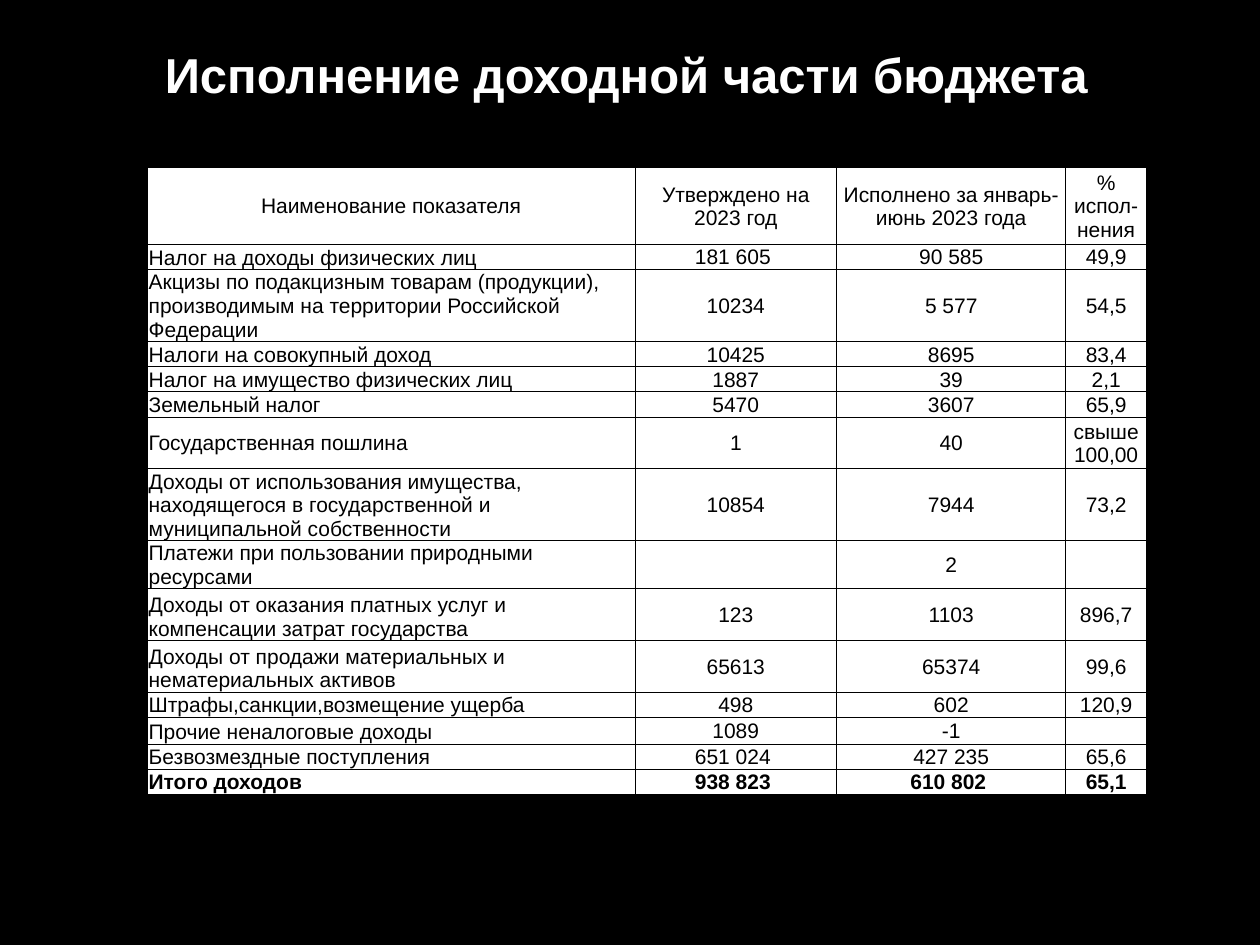
import pptx
import pptx.util
import pptx.dml.color
import pptx.enum.text
import pptx.oxml.ns
import lxml.etree

COLORS = {"background": "000000", "title": "FFFFFF", "cell": "FFFFFF", "text": "000000", "border": "000000"}
FONT = "Arial"
ALIGN = pptx.enum.text.PP_ALIGN
ANCHOR = pptx.enum.text.MSO_ANCHOR
Inches = pptx.util.Inches
qn = pptx.oxml.ns.qn

HEADER = ["Наименование показателя", "Утверждено на 2023 год", "Исполнено за январь-июнь 2023 года", "% испол-нения"]
INCOME = [
    ["Налог на доходы физических лиц", "181 605 ", "90 585", "49,9"],
    ["Акцизы по подакцизным товарам (продукции), производимым на территории Российской Федерации", "10234", "5 577", "54,5"],
    ["Налоги на совокупный доход", "10425", "8695", "83,4"],
    ["Налог на имущество физических лиц", "1887", "39", "2,1"],
    ["Земельный налог", "5470", "3607", "65,9"],
    ["Государственная пошлина", "1", "40", "свыше 100,00"],
    ["Доходы от использования имущества, находящегося в государственной и муниципальной собственности", "10854", "7944", "73,2"],
    ["Платежи при пользовании природными ресурсами", "", "2", ""],
    ["Доходы от оказания платных услуг и компенсации затрат государства", "123", "1103", "896,7"],
    ["Доходы от продажи материальных и нематериальных активов", "65613", "65374", "99,6"],
    ["Штрафы,санкции,возмещение ущерба", "498", "602", "120,9"],
    ["Прочие неналоговые доходы", "1089", "-1", ""],
    ["Безвозмездные поступления", "651 024 ", "427 235", "65,6"],
]
TOTAL = ["Итого доходов", "938 823 ", "610 802 ", "65,1"]
ROWS = [HEADER, *INCOME, TOTAL]
COLUMN_WIDTHS = [3.87, 1.6, 1.82, 0.64]
LINE_HEIGHT = 0.2
TALL_ROWS = {0: 0.61, 2: 0.46, 6: 0.41, 7: 0.45, 9: 0.41, 10: 0.41}
LAST = len(ROWS) - 1
STATE_DUTY = 6


def rgb(name):
    return pptx.dml.color.RGBColor.from_string(COLORS[name])


def add_borders(cell):
    properties = cell._tc.get_or_add_tcPr()
    for position, side in enumerate(("lnL", "lnR", "lnT", "lnB")):
        line = lxml.etree.Element(qn(f"a:{side}"), w=str(pptx.util.Pt(0.5)))
        fill = lxml.etree.SubElement(line, qn("a:solidFill"))
        lxml.etree.SubElement(fill, qn("a:srgbClr"), val=COLORS["border"])
        properties.insert(position, line)


presentation = pptx.Presentation()
presentation.slide_width = Inches(10)
presentation.slide_height = Inches(7.5)
slide = presentation.slides.add_slide(presentation.slide_layouts[5])
slide.background.fill.solid()
slide.background.fill.fore_color.rgb = rgb("background")

title = slide.shapes.title
title.left, title.top, title.width, title.height = (Inches(length) for length in (0.47, 0.23, 9, 0.72))
title.text_frame.text = "Исполнение доходной части бюджета"
title.text_frame.vertical_anchor = ANCHOR.MIDDLE
paragraph = title.text_frame.paragraphs[0]
paragraph.alignment = ALIGN.CENTER
font = paragraph.runs[0].font
font.name, font.size, font.bold = FONT, pptx.util.Pt(28), True
font.color.rgb = rgb("title")

frame = slide.shapes.add_table(len(ROWS), len(HEADER), Inches(1.17), Inches(1.33), Inches(7.94), Inches(5.1))
table = frame.table
table.first_row = False
table.horz_banding = False
for column, width in zip(table.columns, COLUMN_WIDTHS):
    column.width = Inches(width)

for row_index, values in enumerate(ROWS):
    table.rows[row_index].height = Inches(TALL_ROWS.get(row_index, LINE_HEIGHT))
    for column_index, value in enumerate(values):
        cell = table.cell(row_index, column_index)
        cell.fill.solid()
        cell.fill.fore_color.rgb = rgb("cell")
        add_borders(cell)
        cell.margin_left = cell.margin_right = cell.margin_top = Inches(0.01)
        cell.margin_bottom = 0
        cell.vertical_anchor = ANCHOR.MIDDLE
        paragraph = cell.text_frame.paragraphs[0]
        paragraph.alignment = ALIGN.CENTER
        if column_index == 0 and row_index > 0:
            paragraph.alignment = ALIGN.JUSTIFY if row_index >= LAST - 1 else ALIGN.LEFT
            if row_index != STATE_DUTY:
                cell.vertical_anchor = ANCHOR.TOP if row_index >= LAST - 1 else ANCHOR.BOTTOM
        elif row_index == LAST and column_index < 3:
            cell.vertical_anchor = ANCHOR.TOP
        if not value:
            lxml.etree.SubElement(paragraph._p, qn("a:endParaRPr"), sz="1200")
            continue
        paragraph.text = value
        font = paragraph.runs[0].font
        font.name, font.size, font.bold = FONT, pptx.util.Pt(12), row_index == LAST
        font.color.rgb = rgb("text")

presentation.save("out.pptx")
